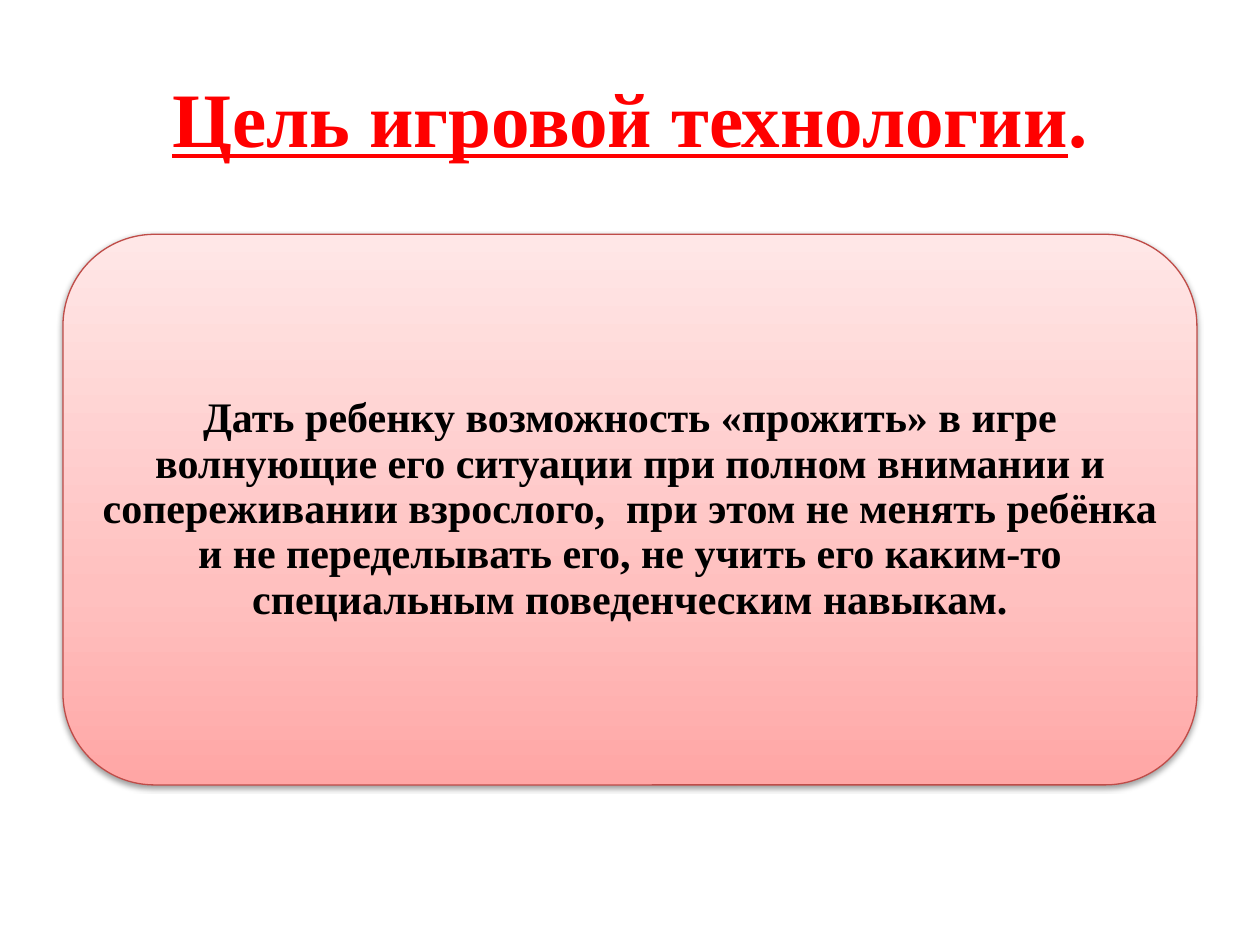
import pptx
import pptx.util
import pptx.dml.color
import pptx.enum.shapes
import pptx.enum.text
import pptx.oxml
import pptx.oxml.ns

Inches = pptx.util.Inches
Pt = pptx.util.Pt
FACE = "Times New Roman"


def color(code):
    return pptx.dml.color.RGBColor.from_string(code)


def style(item, values):
    for name, value in values.items():
        setattr(item, name, value)


def write(para, text, size, code, line=False):
    run = para.add_run()
    run.text = text
    style(run.font, {"name": FACE, "size": Pt(size), "bold": True, "underline": line})
    run.font.color.rgb = color(code)


def center(frame, inset):
    """Centre the text of a frame both ways and return its first paragraph."""
    style(frame, {"word_wrap": True, "vertical_anchor": pptx.enum.text.MSO_ANCHOR.MIDDLE,
                  "auto_size": pptx.enum.text.MSO_AUTO_SIZE.NONE})
    for side in ("left", "top", "right", "bottom"):
        setattr(frame, "margin_" + side, Inches(inset))
    para = frame.paragraphs[0]
    para.alignment = pptx.enum.text.PP_ALIGN.CENTER
    return para


def xml(text):
    return pptx.oxml.parse_xml(text.replace(">", " " + pptx.oxml.ns.nsdecls("a") + ">", 1))


def shade(shape, stops, angle):
    """Fill a shape with a linear gradient of (percent, colour) stops."""
    marks = "".join(f'<a:gs pos="{pos * 1000}"><a:srgbClr val="{code}"/></a:gs>'
                    for pos, code in stops)
    shape.fill.gradient()
    old = shape.fill._xPr.find(pptx.oxml.ns.qn("a:gradFill"))
    old.getparent().replace(old, xml(
        f'<a:gradFill rotWithShape="1"><a:gsLst>{marks}</a:gsLst>'
        f'<a:lin ang="{angle * 60000}" scaled="0"/></a:gradFill>'))


def shadow(shape, code, alpha, blur, dist):
    """Give a shape a soft shadow that falls straight down."""
    shape.shadow.inherit = False
    effects = shape._element.spPr.find(pptx.oxml.ns.qn("a:effectLst"))
    effects.append(xml(
        f'<a:outerShdw blurRad="{Pt(blur)}" dist="{Pt(dist)}" dir="5400000" rotWithShape="0">'
        f'<a:srgbClr val="{code}"><a:alpha val="{alpha * 1000}"/></a:srgbClr></a:outerShdw>'))


def heading(slide, left, top, width, height):
    title = slide.shapes.title
    style(title, {"left": left, "top": top, "width": width, "height": height})
    para = center(title.text_frame, 0.1)
    write(para, "Цель игровой технологии", 44, "FF0000", True)
    write(para, ".", 44, "FF0000")


def panel(slide, left, top, width, height, text):
    """Draw a rounded panel with its text inset clear of the corners."""
    group = slide.shapes.add_group_shape()
    card = group.shapes.add_shape(
        pptx.enum.shapes.MSO_SHAPE.ROUNDED_RECTANGLE, left, top, width, height)
    shade(card, [(0, "FFA6A5"), (35, "FFC0BF"), (100, "FFE7E7")], 270)
    card.line.color.rgb = color("BF4C48")
    card.line.width = Pt(0.75)
    shadow(card, "000000", 38, 3.1, 1.6)

    pad = Inches(0.21)
    box = group.shapes.add_textbox(left + pad, top + pad, width - 2 * pad, height - 2 * pad)
    para = center(box.text_frame, 0.1)
    para.line_spacing = 0.9
    write(para, text, 24, "000000")


def main():
    deck = pptx.Presentation()
    style(deck, {"slide_width": Inches(10), "slide_height": Inches(7.5)})
    slide = deck.slides.add_slide(deck.slide_layouts[5])
    left, width, split = Inches(0.5), Inches(9), Inches(1.86)
    heading(slide, left, 0, width, split)
    panel(slide, left, split, width, Inches(4.37),
          "Дать ребенку возможность «прожить» в игре волнующие его ситуации "
          "при полном внимании и сопереживании взрослого,  при этом не менять "
          "ребёнка и не переделывать его, не учить его каким-то специальным "
          "поведенческим навыкам.")
    deck.save("out.pptx")


if __name__ == "__main__":
    main()
